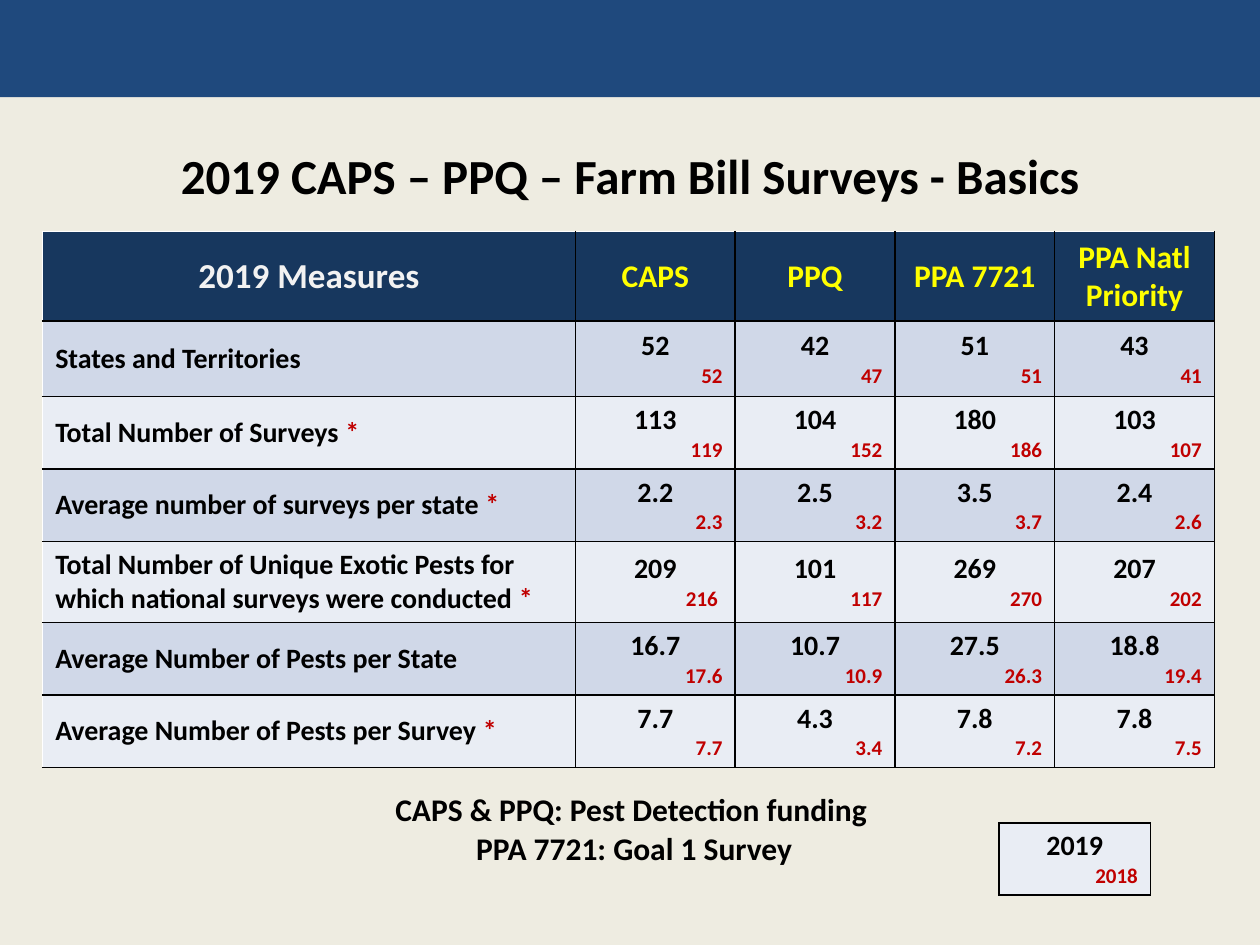
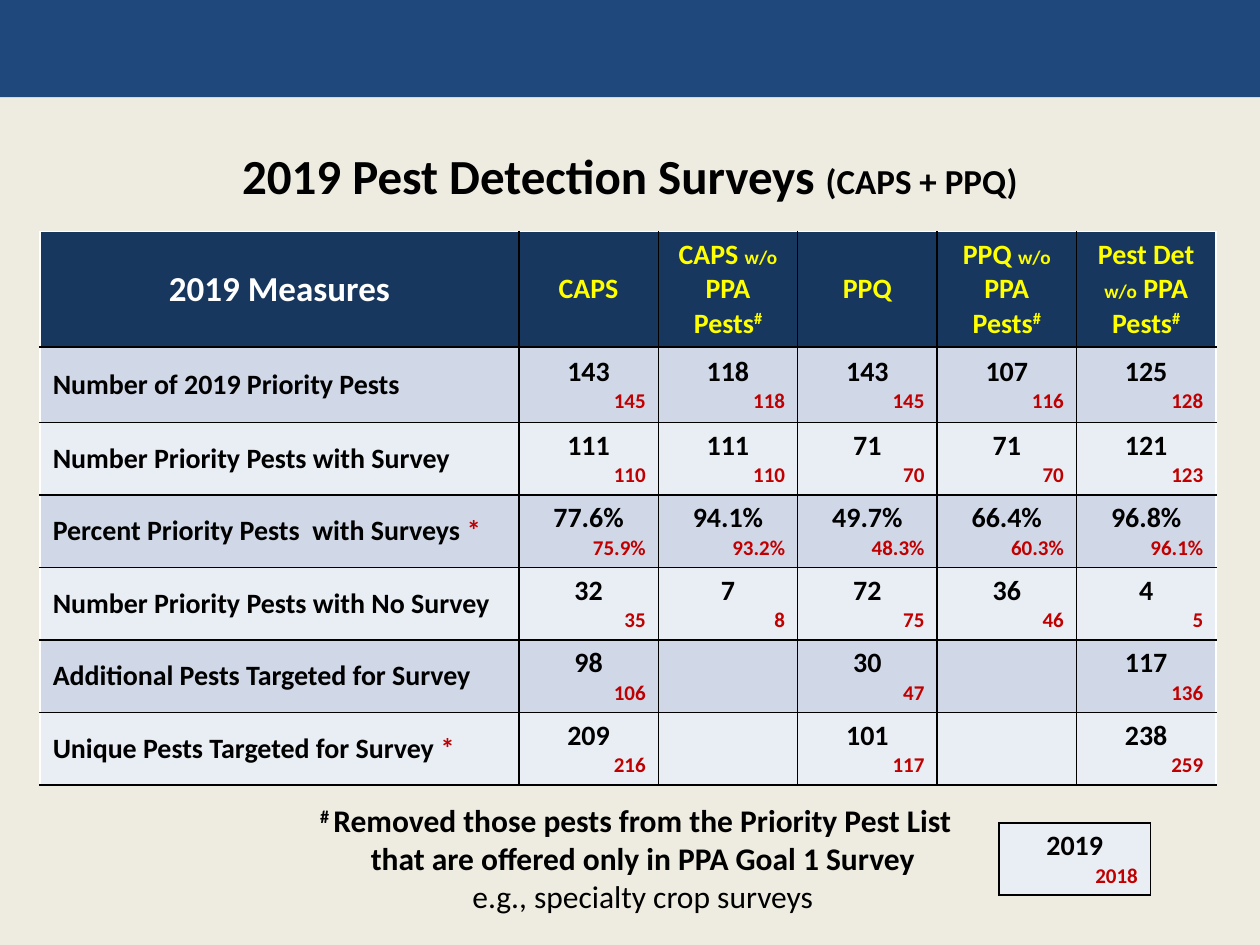
from lxml import etree
from pptx import Presentation
from pptx import util as u
from pptx.dml.color import RGBColor
from pptx.enum import shapes, text
from pptx.oxml import parse_xml
from pptx.oxml.ns import qn

NS = "http://schemas.openxmlformats.org/drawingml/2006/main"
HUES = {
    "page": "EEECE1", "band": "1F497D", "head": "17375E",
    "odd": "D0D8E8", "even": "E9EDF4", "black": "000000",
    "white": "FFFFFF", "pale": "F2F2F2", "gold": "FFFF00", "red": "C00000",
}
FONT = {"name": "Calibri", "size": 18, "bold": True, "color": "black"}
ALIGN = {"l": text.PP_ALIGN.LEFT, "c": text.PP_ALIGN.CENTER, "r": text.PP_ALIGN.RIGHT}
STAR = ("*", {"color": "red"})
HASH = ("#", {"base": 30000})
SMALL = ("w/o", {"size": 11})
SHADE = (
    f'<a:effectLst xmlns:a="{NS}"><a:outerShdw blurRad="38100" dist="38100" '
    'dir="2700000" algn="tl"><a:srgbClr val="000000"><a:alpha val="43000"/>'
    "</a:srgbClr></a:outerShdw></a:effectLst>"
)

BASICS = [
    (["States and Territories"], "52/52 42/47 51/51 43/41"),
    (["Total Number of Surveys ", STAR], "113/119 104/152 180/186 103/107"),
    (["Average number of surveys per state ", STAR], "2.2/2.3 2.5/3.2 3.5/3.7 2.4/2.6"),
    (["Total Number of Unique Exotic Pests for which national surveys were conducted ", STAR],
     "209/216 101/117 269/270 207/202"),
    (["Average Number of Pests per State"], "16.7/17.6 10.7/10.9 27.5/26.3 18.8/19.4"),
    (["Average Number of Pests per Survey ", STAR], "7.7/7.7 4.3/3.4 7.8/7.2 7.8/7.5"),
]
PESTS = [
    (["Number of 2019 Priority Pests"], "143/145 118/118 143/145 107/116 125/128"),
    (["Number Priority Pests with Survey"], "111/110 111/110 71/70 71/70 121/123"),
    (["Percent Priority Pests  with Surveys ", STAR],
     "77.6%/75.9% 94.1%/93.2% 49.7%/48.3% 66.4%/60.3% 96.8%/96.1%"),
    (["Number Priority Pests with No Survey"], "32/35 7/8 72/75 36/46 4/5"),
    (["Additional Pests Targeted for Survey"], "98/106 - 30/47 - 117/136"),
    (["Unique Pests Targeted for Survey ", STAR], "209/216 - 101/117 - 238/259"),
]


def rgb(hue):
    return RGBColor.from_string(HUES[hue])


def paint(fill, hue):
    fill.solid()
    fill.fore_color.rgb = rgb(hue)


def add_line(frame, runs, align="l", first=True, **base):
    para = frame.paragraphs[0] if first else frame.add_paragraph()
    para.alignment = ALIGN[align]
    for item in runs:
        words, extra = (item, {}) if isinstance(item, str) else item
        form = {**FONT, **base, **extra}
        run = para.add_run()
        run.text = words
        run.font.color.rgb = rgb(form["color"])
        for key, val in {"name": form["name"], "size": u.Pt(form["size"]),
                         "bold": form["bold"]}.items():
            setattr(run.font, key, val)
        if "base" in form:
            run._r.get_or_add_rPr().set("baseline", str(form["base"]))
    return para


def set_edges(cell, **hues):
    props = cell._tc.get_or_add_tcPr()
    for side in "LRTB":
        line = etree.SubElement(props, qn(f"a:ln{side}"), w=str(u.Pt(1)))
        fill = etree.SubElement(line, qn("a:solidFill"))
        etree.SubElement(fill, qn("a:srgbClr"), val=HUES[hues.get(side, "black")])


def add_pair(cell, new, old):
    add_line(cell.text_frame, [new], "c", size=16)
    add_line(cell.text_frame, [old], "r", first=False, size=12, color="red")


def add_grid(slide, left, top, cols, rows):
    frame = slide.shapes.add_table(
        len(rows), len(cols), u.Cm(left), u.Cm(top), u.Cm(sum(cols)), u.Cm(sum(rows)))
    grid = frame.table
    for col, width in zip(grid.columns, cols):
        col.width = u.Cm(width)
    for row, height in zip(grid.rows, rows):
        row.height = u.Cm(height)
    return grid


def add_stats(slide, left, cols, high, heads, data, size, hue, rim):
    grid = add_grid(slide, left, 4.67, cols, [high, 1.52] + [1.4] * 5)
    last = len(cols) - 1
    for r in range(len(data) + 1):
        for c in range(last + 1):
            cell = grid.cell(r, c)
            edges = {"T": "black" if r else "white"}
            if c == 0:
                edges["L"] = "white"
            if c == last:
                edges["R"] = rim
            set_edges(cell, **edges)
            paint(cell.fill, ("odd" if r % 2 else "even") if r else "head")
            cell.vertical_anchor = text.MSO_ANCHOR.MIDDLE
    add_line(grid.cell(0, 0).text_frame, ["2019 Measures"], "c", size=20, color=hue)
    for c, head in enumerate(heads, 1):
        add_line(grid.cell(0, c).text_frame, head, "c", size=size, color="gold")
    for r, (label, pairs) in enumerate(data, 1):
        add_line(grid.cell(r, 0).text_frame, label, size=16)
        for c, pair in enumerate(pairs.split(), 1):
            if pair != "-":
                add_pair(grid.cell(r, c), *pair.split("/"))
    return grid


def add_key(slide):
    cell = add_grid(slide, 20.14, 16.59, [3.05], [1.45]).cell(0, 0)
    set_edges(cell)
    paint(cell.fill, "even")
    add_pair(cell, "2019", "2018")


def add_note(slide, left, top, width, height, wrap=False):
    box = slide.shapes.add_textbox(*map(u.Cm, (left, top, width, height)))
    frame = box.text_frame
    frame.word_wrap = wrap
    frame.auto_size = text.MSO_AUTO_SIZE.SHAPE_TO_FIT_TEXT
    return frame


def add_page(deck, runs):
    slide = deck.slides.add_slide(deck.slide_layouts[5])
    title = slide.shapes.title
    for key, val in {"left": 1.27, "top": 2.54, "width": 22.86, "height": 1.98}.items():
        setattr(title, key, u.Cm(val))
    title.text_frame.vertical_anchor = text.MSO_ANCHOR.MIDDLE
    for run in add_line(title.text_frame, runs, "c", size=28).runs:
        run._r.get_or_add_rPr().insert(1, parse_xml(SHADE))
    return slide


def set_master(deck, slide):
    master = deck.slide_master
    paint(master.background.fill, "page")
    band = slide.shapes.add_shape(
        shapes.MSO_SHAPE.RECTANGLE, 0, 0, deck.slide_width, u.Cm(1.96))
    band.shadow.inherit = False
    paint(band.fill, "band")
    band.line.fill.background()
    master.shapes.element.insert(2, band.element)


def add_basics(deck):
    slide = add_page(deck, ["2019 CAPS – PPQ – Farm Bill Surveys - Basics"])
    heads = [["CAPS"], ["PPQ"], ["PPA 7721"], ["PPA Natl Priority"]]
    grid = add_stats(slide, 0.86, [10.74] + [3.22] * 4, 1.78, heads, BASICS, 18, "pale", "black")
    grid.cell(4, 1).text_frame.paragraphs[1].runs[0].text = "216 "
    add_line(add_note(slide, 7.72, 15.8, 10.11, 1.02), ["CAPS & PPQ: Pest Detection funding"])
    add_line(add_note(slide, 9.35, 16.59, 6.96, 1.02), ["PPA 7721: Goal 1 Survey"])
    add_key(slide)
    return slide


def add_pests(deck):
    slide = add_page(deck, ["2019 Pest Detection Surveys ", ("(CAPS + PPQ)", {"size": 20})])
    tail = [SMALL, " PPA Pests", HASH]
    heads = [["CAPS"], ["CAPS ", *tail], ["PPQ"], ["PPQ ", *tail], ["Pest Det ", *tail]]
    add_stats(slide, 0.81, [9.65] + [2.81] * 5, 2.29, heads, PESTS, 16, "white", "white")
    note = add_note(slide, 6.15, 16.03, 13.34, 2.57, wrap=True)
    add_line(note, [("# ", {"base": 30000}), "Removed those pests from the Priority Pest List"], "c")
    for words, bold in (("that are offered only in PPA Goal 1 Survey", True),
                        ("e.g., specialty crop surveys", False)):
        para = add_line(note, [words], "c", first=False, bold=bold)
        para._p.get_or_add_pPr().set("marL", str(u.Cm(0.28)))
    add_key(slide)


def main():
    deck = Presentation()
    deck.slide_width, deck.slide_height = u.Cm(25.4), u.Cm(19.05)
    set_master(deck, add_basics(deck))
    add_pests(deck)
    deck.save("out.pptx")


if __name__ == "__main__":
    main()
